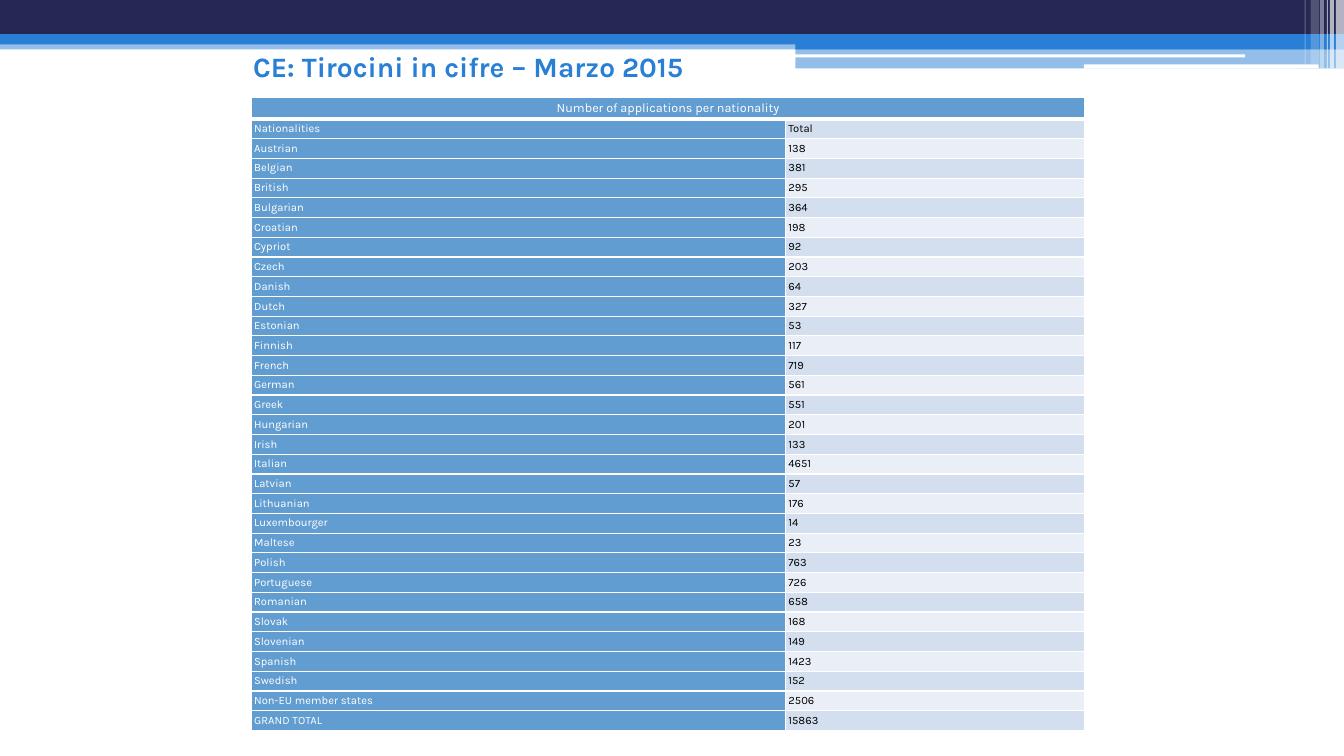
from dataclasses import dataclass

from lxml import etree
from pptx import Presentation
from pptx.dml.color import RGBColor
from pptx.enum.shapes import MSO_SHAPE
from pptx.enum.text import MSO_ANCHOR, MSO_AUTO_SIZE, PP_ALIGN
from pptx.oxml.ns import qn
from pptx.util import Inches, Pt


@dataclass(frozen=True)
class Theme:
    font: str = "Karla"
    navy: str = "242852"
    blue: str = "297FD5"
    label_fill: str = "629DD1"
    stripes: tuple = ("EAEFF7", "D3DFEE")
    white: str = "FFFFFF"
    black: str = "000000"
    title_size: float = 20
    header_size: float = 9
    body_size: float = 8
    border_width: float = 1
    header_rule: float = 3


class SlideBuilder:
    grid_step = Inches(0.1)

    def __init__(self, slide, theme):
        self.slide = slide
        self.theme = theme

    def span(self, units):
        return round(units * self.grid_step)

    def place(self, shape, column, row, columns, rows):
        shape.left, shape.top = self.span(column), self.span(row)
        shape.width, shape.height = self.span(columns), self.span(rows)

    def paint(self, fill, color, opacity=100):
        fill.solid()
        fill.fore_color.rgb = RGBColor.from_string(color)
        if opacity < 100:
            color_element = fill._xPr.find(qn("a:solidFill"))[0]
            alpha = etree.SubElement(color_element, qn("a:alpha"))
            alpha.set("val", str(opacity * 1000))

    def format_text(self, text_frame, size, color, alignment=PP_ALIGN.LEFT, bold=False):
        for paragraph in text_frame.paragraphs:
            paragraph.alignment = alignment
            for run in paragraph.runs:
                run.font.name = self.theme.font
                run.font.size = Pt(size)
                run.font.bold = bold
                run.font.color.rgb = RGBColor.from_string(color)

    def band(self, area, color, opacity=100, kind=MSO_SHAPE.RECTANGLE):
        shape = self.slide.shapes.add_shape(kind, *map(self.span, area))
        shape.shadow.inherit = False
        shape.line.fill.background()
        self.paint(shape.fill, color, opacity)

    def title(self, text, area):
        title = self.slide.shapes.title
        self.place(title, *area)
        title.text_frame.text = text
        title.text_frame.word_wrap = True
        title.text_frame.auto_size = MSO_AUTO_SIZE.SHAPE_TO_FIT_TEXT
        title.text_frame.vertical_anchor = MSO_ANCHOR.TOP
        self.format_text(title.text_frame, self.theme.title_size, self.theme.blue, bold=True)
        self.slide.shapes._spTree.append(title._element)

    def borders(self, cell, bottom_width):
        properties = cell._tc.get_or_add_tcPr()
        for index, side in enumerate(("lnL", "lnR", "lnT", "lnB")):
            width = bottom_width if side == "lnB" else self.theme.border_width
            line = etree.Element(qn(f"a:{side}"), w=str(Pt(width)))
            fill = etree.SubElement(line, qn("a:solidFill"))
            etree.SubElement(fill, qn("a:srgbClr"), val=self.theme.white)
            properties.insert(index, line)

    def cell(self, cell, text, fill, color, size, alignment=PP_ALIGN.LEFT, bottom_width=None):
        cell.text_frame.text = text
        cell.vertical_anchor = MSO_ANCHOR.MIDDLE
        cell.margin_left = cell.margin_right = self.span(0.3)
        cell.margin_top = cell.margin_bottom = self.span(0.3)
        self.format_text(cell.text_frame, size, color, alignment)
        self.paint(cell.fill, fill)
        self.borders(cell, bottom_width or self.theme.border_width)

    def table(self, heading, records, origin, column_widths, header_height, row_height):
        theme = self.theme
        height = header_height + row_height * len(records)
        area = (*origin, sum(column_widths), height)
        frame = self.slide.shapes.add_table(
            len(records) + 1, len(column_widths), *map(self.span, area))
        table = frame.table
        table.first_row = table.horz_banding = False
        for column, width in zip(table.columns, column_widths):
            column.width = self.span(width)
        for index, row in enumerate(table.rows):
            row.height = self.span(row_height if index else header_height)
        table.cell(0, 0).merge(table.cell(0, 1))
        self.cell(table.cell(0, 0), heading, theme.label_fill, theme.white,
                  theme.header_size, PP_ALIGN.CENTER, theme.header_rule)
        for index, (label, value) in enumerate(records, start=1):
            self.cell(table.cell(index, 0), label, theme.label_fill, theme.white, theme.body_size)
            self.cell(table.cell(index, 1), value, theme.stripes[index % 2],
                      theme.black, theme.body_size)


APPLICATIONS = [
    ("Nationalities", "Total"),
    ("Austrian", "138"),
    ("Belgian", "381"),
    ("British", "295"),
    ("Bulgarian", "364"),
    ("Croatian", "198"),
    ("Cypriot", "92"),
    ("Czech", "203"),
    ("Danish", "64"),
    ("Dutch", "327"),
    ("Estonian", "53"),
    ("Finnish", "117"),
    ("French", "719"),
    ("German", "561"),
    ("Greek", "551"),
    ("Hungarian", "201"),
    ("Irish", "133"),
    ("Italian", "4651"),
    ("Latvian", "57"),
    ("Lithuanian", "176"),
    ("Luxembourger", "14"),
    ("Maltese", "23"),
    ("Polish", "763"),
    ("Portuguese", "726"),
    ("Romanian", "658"),
    ("Slovak", "168"),
    ("Slovenian", "149"),
    ("Spanish", "1423"),
    ("Swedish", "152"),
    ("Non-EU member states", "2506"),
    ("GRAND TOTAL", "15863"),
]

WIDTH = 133.3
HALF_START = 78.9
HALF_WIDTH = WIDTH - HALF_START

HIGHLIGHTS = [
    (132.5, 0.8, 6.8, 65),
    (131.9, 0.4, 6.8, 65),
    (131.6, 0.1, 6.8, 60),
    (130.9, 0.4, 6.8, 40),
    (130, 0.8, 6.4, 20),
    (129.4, 0.1, 6.4, 30),
]


def main():
    theme = Theme()
    presentation = Presentation()
    presentation.slide_width = Inches(13.33)
    presentation.slide_height = Inches(7.5)
    slide = presentation.slides.add_slide(presentation.slide_layouts[5])
    builder = SlideBuilder(slide, theme)

    builder.band((0, 4, WIDTH, 0.9), theme.blue, 50)
    builder.band((0, 0, WIDTH, 3.4), theme.navy)
    builder.band((0, 3.4, WIDTH, 1), theme.blue)
    builder.band((HALF_START, 3.9, HALF_WIDTH, 1), theme.blue)
    builder.band((HALF_START, 4.8, HALF_WIDTH, 2), theme.blue, 50)
    for area in ((78.8, 5.4, 44.7, 0.3), (107.5, 6.4, 23.3, 0.4)):
        builder.band(area, theme.white, kind=MSO_SHAPE.ROUNDED_RECTANGLE)
    for column, width, height, opacity in HIGHLIGHTS:
        builder.band((column, 0, width, height), theme.white, opacity)

    builder.table("Number of applications per nationality", APPLICATIONS,
                  origin=(24.9, 9.7), column_widths=(53, 29.7),
                  header_height=2.1, row_height=1.96)
    builder.title("CE: Tirocini in cifre – Marzo 2015", (24.1, 4.4, 50.4, 4.4))
    presentation.save("out.pptx")


if __name__ == "__main__":
    main()
